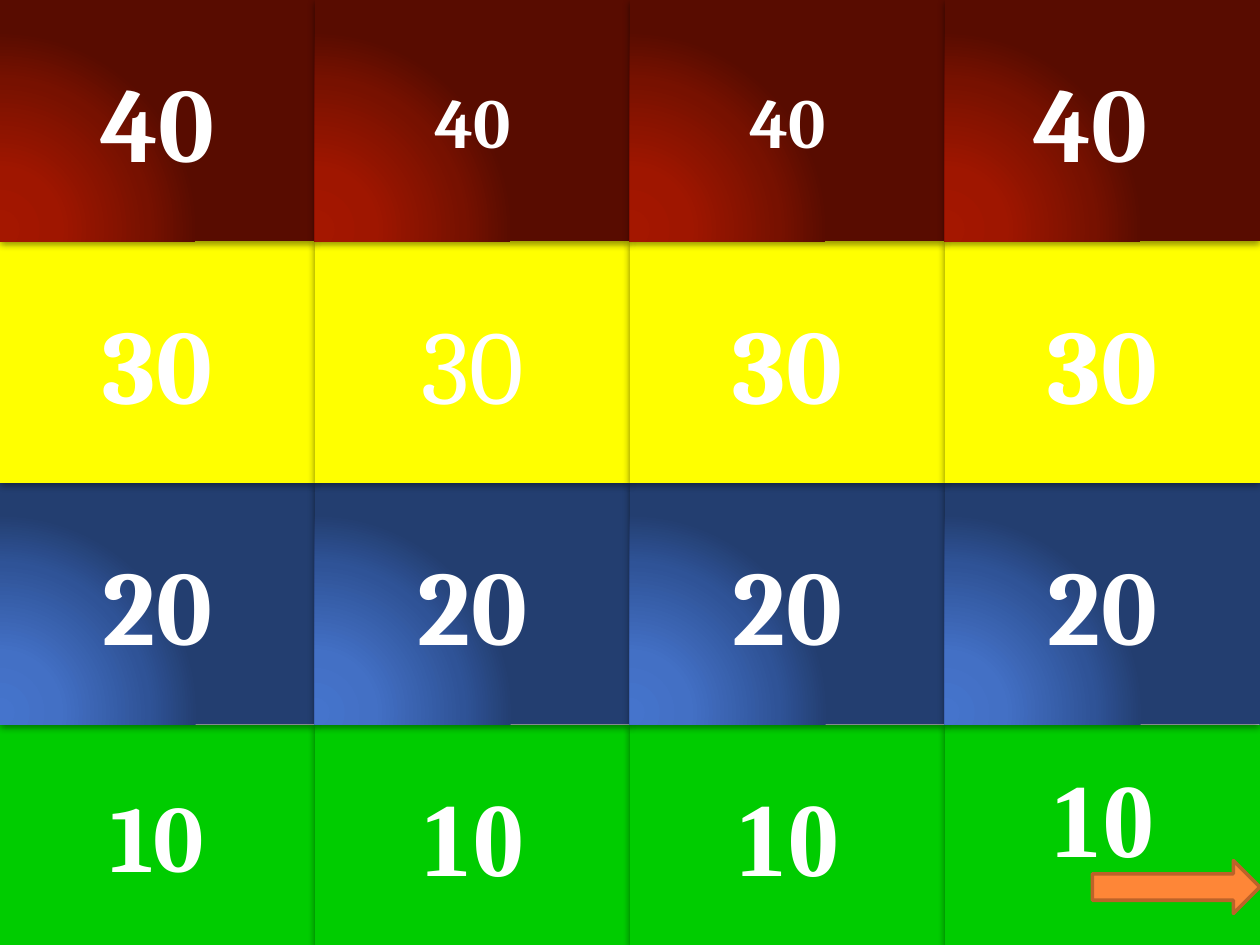
from lxml.etree import SubElement
from pptx import Presentation
from pptx.dml.color import RGBColor
from pptx.enum.shapes import MSO_SHAPE
from pptx.enum.text import MSO_ANCHOR, PP_ALIGN
from pptx.oxml import parse_xml
from pptx.oxml.ns import nsdecls, qn
from pptx.util import Inches, Pt


def rgb(value):
    return RGBColor.from_string(value)


def add_glow(tile, colors):
    """Fill the tile with a circular gradient centred near its lower left corner."""
    stops = "".join(
        f'<a:gs pos="{position * 1000}"><a:srgbClr val="{color}"/></a:gs>'
        for position, color in zip((0, 30, 75, 100), colors)
    )
    gradient = parse_xml(
        f'<a:gradFill {nsdecls("a")} rotWithShape="1"><a:gsLst>{stops}</a:gsLst>'
        '<a:path path="circle"><a:fillToRect l="5000" t="100000" r="120000" b="10000"/>'
        "</a:path></a:gradFill>"
    )
    tile._element.spPr.insert(2, gradient)


RED = ("A41700", "9F1600", "771100", "580C00")
BLUE = ("4574CC", "4370C5", "2F5397", "233E70")
GRID_COLOR = "7598D9"
TILE_WIDTH = 2.5
ROW_STEP = 5.75 / 3

# points, fill, height, font of each column, text size of each column
rows = [
    ("40", RED, ROW_STEP, ["Cambria"] * 4, [60, 40, 40, 60]),
    ("30", "FFFF00", ROW_STEP, ["Cambria"] * 4, [60] * 4),
    ("20", BLUE, ROW_STEP, ["Cambria"] * 4, [60] * 4),
    ("10", "00CC00", 1.75, ["Cambria"] + ["Times New Roman"] * 3, [54, 60, 60, 60]),
]

prs = Presentation()
prs.slide_width, prs.slide_height = Inches(10), Inches(7.5)
slide = prs.slides.add_slide(prs.slide_layouts[6])

# The grid whose lines run between the tiles
grid = slide.shapes.add_table(4, 4, 0, 0, Inches(10), Inches(7.5)).table
for row in range(4):
    for column in range(4):
        cell = grid.cell(row, column)
        properties = cell._tc.get_or_add_tcPr()
        for side in ("L", "R", "T", "B"):
            width = Pt(2) if (row, side) == (0, "B") else Pt(1)
            border = SubElement(properties, qn(f"a:ln{side}"), w=str(width))
            border_fill = SubElement(border, qn("a:solidFill"))
            SubElement(border_fill, qn("a:srgbClr"), val=GRID_COLOR)
        if row % 2:
            cell.fill.solid()
            cell.fill.fore_color.rgb = rgb(GRID_COLOR)
            cell_color = properties.find(qn("a:solidFill")).find(qn("a:srgbClr"))
            SubElement(cell_color, qn("a:alpha"), val="20000")
        else:
            cell.fill.background()

# Bottom row first, so that each row casts its shadow on the one below
for row, (points, fill, height, fonts, sizes) in reversed(list(enumerate(rows))):
    for column, (font_name, size) in enumerate(zip(fonts, sizes)):
        tile = slide.shapes.add_shape(
            MSO_SHAPE.FLOWCHART_PROCESS,
            Inches(column * TILE_WIDTH), Inches(row * ROW_STEP),
            Inches(TILE_WIDTH), Inches(height),
        )
        tile.line.fill.background()
        if isinstance(fill, str):
            tile.fill.solid()
            tile.fill.fore_color.rgb = rgb(fill)
        else:
            add_glow(tile, fill)

        tile.shadow.inherit = False
        effects = tile._element.spPr.find(qn("a:effectLst"))
        shadow = SubElement(effects, qn("a:outerShdw"), blurRad=str(Pt(4)),
                            dist=str(Pt(1.6)), dir="5400000", rotWithShape="0")
        shadow_color = SubElement(shadow, qn("a:srgbClr"), val="000000")
        SubElement(shadow_color, qn("a:alpha"), val="42000")

        frame = tile.text_frame
        frame.word_wrap = True
        frame.vertical_anchor = MSO_ANCHOR.MIDDLE
        if column == 3 and points == "40":
            frame.margin_right = Inches(0.29)
        if column == 3 and points == "10":
            frame.margin_bottom = Inches(0.35)  # room for the arrow
        label = frame.paragraphs[0]
        label.text = points
        label.alignment = PP_ALIGN.CENTER
        label.font.name = font_name
        label.font.size = Pt(size)
        label.font.bold = (points, column) != ("30", 1)
        label.font.color.rgb = rgb("FFFFFF")

next_arrow = slide.shapes.add_shape(
    MSO_SHAPE.RIGHT_ARROW, Inches(8.67), Inches(6.83), Inches(1.33), Inches(0.42)
)
next_arrow.shadow.inherit = False
next_arrow.fill.solid()
next_arrow.fill.fore_color.rgb = rgb("FE8637")
next_arrow.line.color.rgb = rgb("BC6329")
next_arrow.line.width = Pt(2)

prs.save("out.pptx")
